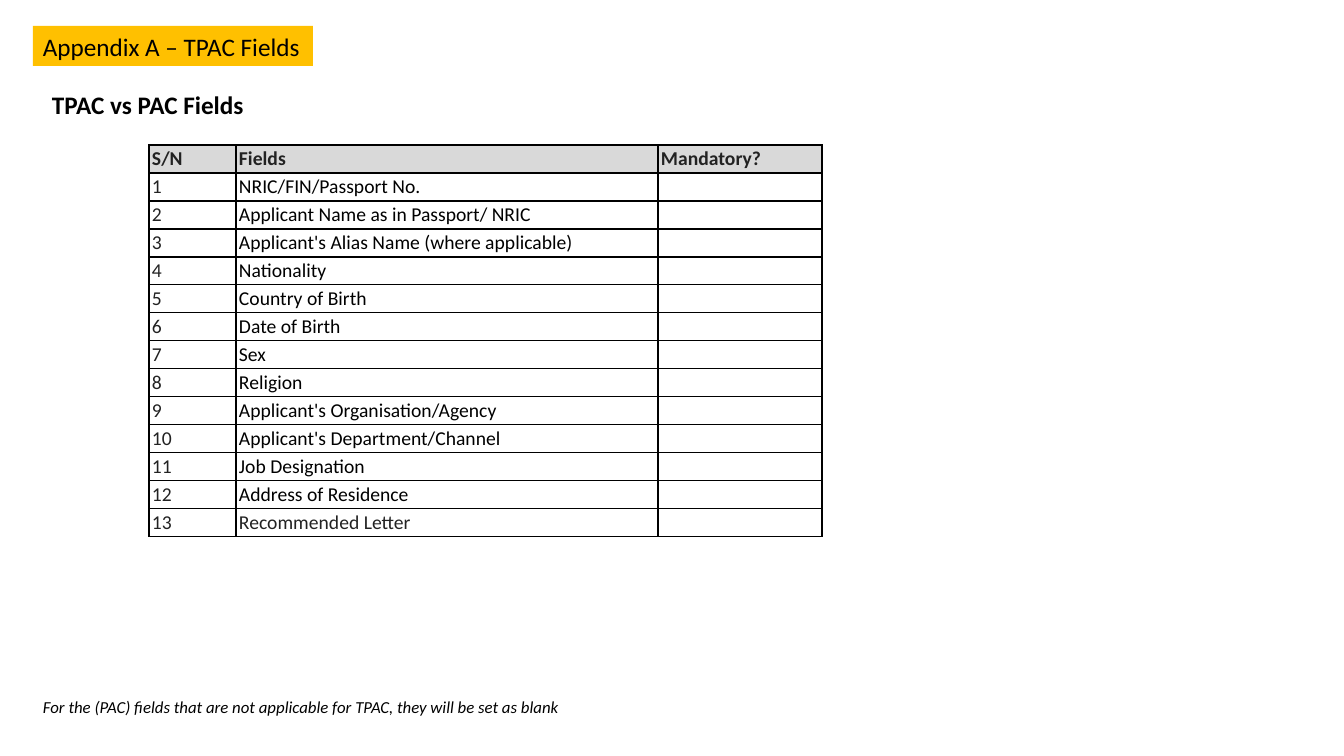
from dataclasses import dataclass

from lxml import etree
from pptx import Presentation
from pptx import util as u
from pptx.dml.color import RGBColor
from pptx.enum import shapes, text
from pptx.oxml.ns import qn

PX = 914400 / 100.8  # EMU in one px


@dataclass(frozen=True)
class Theme:
    font: str = "Calibri"
    black: str = "000000"
    ink: str = "222222"
    header: str = "D9D9D9"
    banner: str = "FFC000"
    heading_size: int = 18
    table_size: int = 14
    note_size: int = 12


def px(length):
    return u.Emu(round(length * PX))


class SlideBuilder:
    def __init__(self, slide, theme):
        self.slide = slide
        self.theme = theme

    def run(self, paragraph, words, size, color, bold=False, italic=False):
        font_run = paragraph.add_run()
        font_run.text = words
        font = font_run.font
        font.name, font.size = self.theme.font, u.Pt(size)
        font.bold, font.italic = bold, italic
        font.color.rgb = RGBColor.from_string(color)

    def line_of_text(self, shape, words, size, **style):
        frame = shape.text_frame
        frame.word_wrap = False
        frame.auto_size = text.MSO_AUTO_SIZE.SHAPE_TO_FIT_TEXT
        frame.vertical_anchor = text.MSO_ANCHOR.TOP
        paragraph = frame.paragraphs[0]
        paragraph.alignment = text.PP_ALIGN.LEFT
        self.run(paragraph, words, size, self.theme.black, **style)

    def label(self, box, words, size, **style):
        label = self.slide.shapes.add_textbox(*map(px, box))
        self.line_of_text(label, words, size, **style)

    def banner(self, box, words):
        banner = self.slide.shapes.add_shape(shapes.MSO_SHAPE.RECTANGLE, *map(px, box))
        banner.shadow.inherit = False
        banner.fill.solid()
        banner.fill.fore_color.rgb = RGBColor.from_string(self.theme.banner)
        banner.line.fill.background()
        self.line_of_text(banner, words, self.theme.heading_size)

    def borders(self, cell):
        properties = cell._tc.get_or_add_tcPr()
        for side in ("a:lnL", "a:lnR", "a:lnT", "a:lnB"):
            line = etree.SubElement(properties, qn(side), w=str(u.Pt(1)))
            fill = etree.SubElement(line, qn("a:solidFill"))
            etree.SubElement(fill, qn("a:srgbClr"), val=self.theme.black)

    def cell(self, cell, words, color, is_header):
        cell.margin_left = cell.margin_right = px(3)
        cell.margin_top = cell.margin_bottom = px(2)
        cell.vertical_anchor = text.MSO_ANCHOR.BOTTOM
        self.borders(cell)
        if is_header:
            cell.fill.solid()
            cell.fill.fore_color.rgb = RGBColor.from_string(self.theme.header)
        else:
            cell.fill.background()
        paragraph = cell.text_frame.paragraphs[0]
        size = self.theme.table_size
        if words:
            self.run(paragraph, words, size, color, bold=is_header)
        else:  # keeps an empty cell as low as a filled one
            etree.SubElement(paragraph._p, qn("a:endParaRPr"), sz=str(size * 100))

    def table(self, left, top, widths, row_height, rows, color_of):
        frame = self.slide.shapes.add_table(
            len(rows), len(widths), px(left), px(top),
            px(sum(widths)), px(row_height * len(rows)))
        table = frame.table
        table.horz_banding = False
        for column, width in zip(table.columns, widths):
            column.width = px(width)
        for r, row in enumerate(rows):
            table.rows[r].height = px(row_height)
            for c, words in enumerate(row):
                self.cell(table.cell(r, c), words, color_of(r, c), r == 0)


FIELDS = [
    "NRIC/FIN/Passport No.",
    "Applicant Name as in Passport/ NRIC",
    "Applicant's Alias Name (where applicable)",
    "Nationality",
    "Country of Birth",
    "Date of Birth",
    "Sex",
    "Religion",
    "Applicant's Organisation/Agency",
    "Applicant's Department/Channel",
    "Job Designation",
    "Address of Residence",
    "Recommended Letter",
]


def main():
    deck = Presentation()
    deck.slide_width, deck.slide_height = px(1344), px(756)
    theme = Theme()
    page = SlideBuilder(deck.slides.add_slide(deck.slide_layouts[6]), theme)

    # Field table: names are black, except the last one
    field_rows = [("S/N", "Fields", "Mandatory?")]
    field_rows += [(str(n), field, "") for n, field in enumerate(FIELDS, 1)]

    def field_color(row, column):
        is_black = column == 1 and 0 < row < len(FIELDS)
        return theme.black if is_black else theme.ink

    page.table(149, 145, (87, 422, 164), 28, field_rows, field_color)

    # Headings
    page.banner((33, 26, 280, 40), "Appendix A – TPAC Fields")
    page.label((42, 84, 214, 40), "TPAC vs PAC Fields", theme.heading_size, bold=True)

    # Footnote
    page.label(
        (33, 692, 541, 30),
        "For the (PAC) fields that are not applicable for TPAC, they will be set as blank",
        theme.note_size, italic=True)

    deck.save("out.pptx")


if __name__ == "__main__":
    main()
